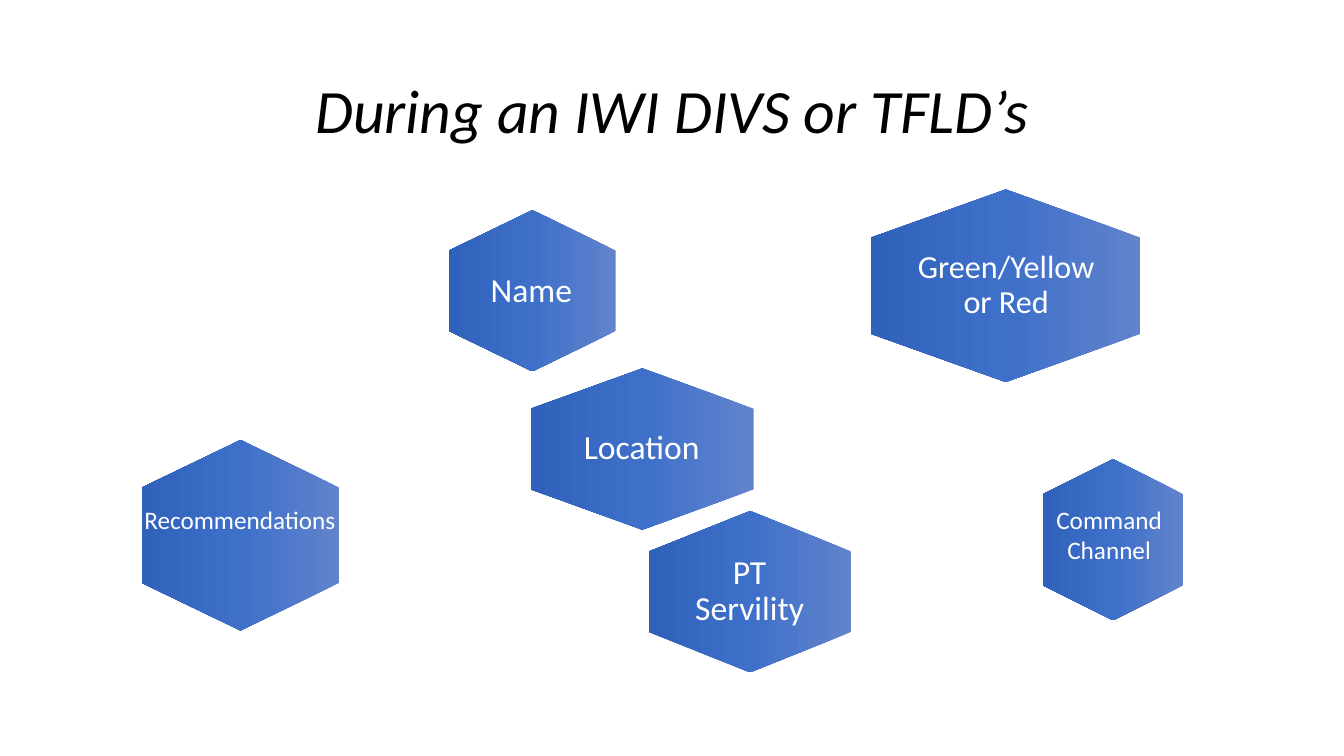
from copy import deepcopy
from dataclasses import dataclass

from pptx import Presentation
from pptx.dml.color import RGBColor
from pptx.enum.shapes import MSO_SHAPE
from pptx.enum.text import MSO_ANCHOR, PP_ALIGN
from pptx.slide import Slide
from pptx.util import Inches, Pt

FONT = "Calibri"
WHITE = "FFFFFF"
BLACK = "000000"
GRADIENT = ((0, "6183CB"), (0.5, "3E70CA"), (1, "3062BB"))


@dataclass(frozen=True)
class Box:
    left: float
    top: float
    width: float
    height: float

    def lengths(self) -> tuple[int, ...]:
        return tuple(Inches(v) for v in (self.left, self.top, self.width, self.height))


@dataclass(frozen=True)
class Label:
    text: str
    box: Box
    size: float
    inset_x: float = 0.1
    inset_y: float = 0.1
    line_spacing: float = 0.9
    color: str = WHITE
    italic: bool = False


@dataclass(frozen=True)
class Topic:
    hexagon: Box  # before the quarter turn
    label: Label


TITLE = Label("During an IWI DIVS or TFLD’s", Box(0.92, 0.4, 11.5, 1.45), 44,
              inset_y=0.05, color=BLACK, italic=True)

TOPICS = (
    Topic(Box(4.48, 2.06, 1.6, 1.65),
          Label("Name", Box(4.72, 2.36, 1.1, 1.06), 24)),
    Topic(Box(9.02, 1.5, 1.91, 2.67),
          Label("Green/Yellow or Red", Box(9.09, 2.2, 1.78, 1.27), 23, 0, 0)),
    Topic(Box(5.57, 3.35, 1.6, 2.21),
          Label("Location", Box(5.63, 3.92, 1.47, 1.06), 24)),
    Topic(Box(1.44, 4.33, 1.89, 1.96),
          Label("Recommendations", Box(1.23, 4.95, 2.3, 0.4), 18,
                inset_y=0.05, line_spacing=1)),
    Topic(Box(6.64, 4.87, 1.6, 2),
          Label("PT Servility", Box(6.77, 5.34, 1.33, 1.06), 24)),
    Topic(Box(10.24, 4.66, 1.6, 1.39),
          Label("Command Channel", Box(10.34, 4.95, 1.32, 0.71), 18,
                inset_y=0.05, line_spacing=1)),
)


def rgb(color: str) -> RGBColor:
    return RGBColor.from_string(color)


def add_hexagon(slide: Slide, box: Box) -> None:
    """Add a hexagon turned to stand on its point, shaded from top to bottom."""
    shape = slide.shapes.add_shape(MSO_SHAPE.HEXAGON, *box.lengths())
    shape.rotation = 90
    shape.shadow.inherit = False
    shape.line.fill.background()
    shape.fill.gradient()
    shape.fill.gradient_angle = 270
    first_stop = shape.fill.gradient_stops[0]._gs
    first_stop.addnext(deepcopy(first_stop))
    for stop, (position, color) in zip(shape.fill.gradient_stops, GRADIENT):
        stop.position = position
        stop.color.rgb = rgb(color)


def add_label(slide: Slide, label: Label) -> None:
    frame = slide.shapes.add_textbox(*label.box.lengths()).text_frame
    frame.word_wrap = True
    frame.vertical_anchor = MSO_ANCHOR.MIDDLE
    frame.margin_left = frame.margin_right = Inches(label.inset_x)
    frame.margin_top = frame.margin_bottom = Inches(label.inset_y)
    paragraph = frame.paragraphs[0]
    paragraph.alignment = PP_ALIGN.CENTER
    paragraph.line_spacing = label.line_spacing
    run = paragraph.add_run()
    run.text = label.text
    run.font.name = FONT
    run.font.size = Pt(label.size)
    run.font.italic = label.italic
    run.font.color.rgb = rgb(label.color)


def main() -> None:
    presentation = Presentation()
    presentation.slide_width = Inches(13.33)
    presentation.slide_height = Inches(7.5)
    slide = presentation.slides.add_slide(presentation.slide_layouts[6])
    add_label(slide, TITLE)
    for topic in TOPICS:
        add_hexagon(slide, topic.hexagon)
        add_label(slide, topic.label)
    presentation.save("out.pptx")


if __name__ == "__main__":
    main()
